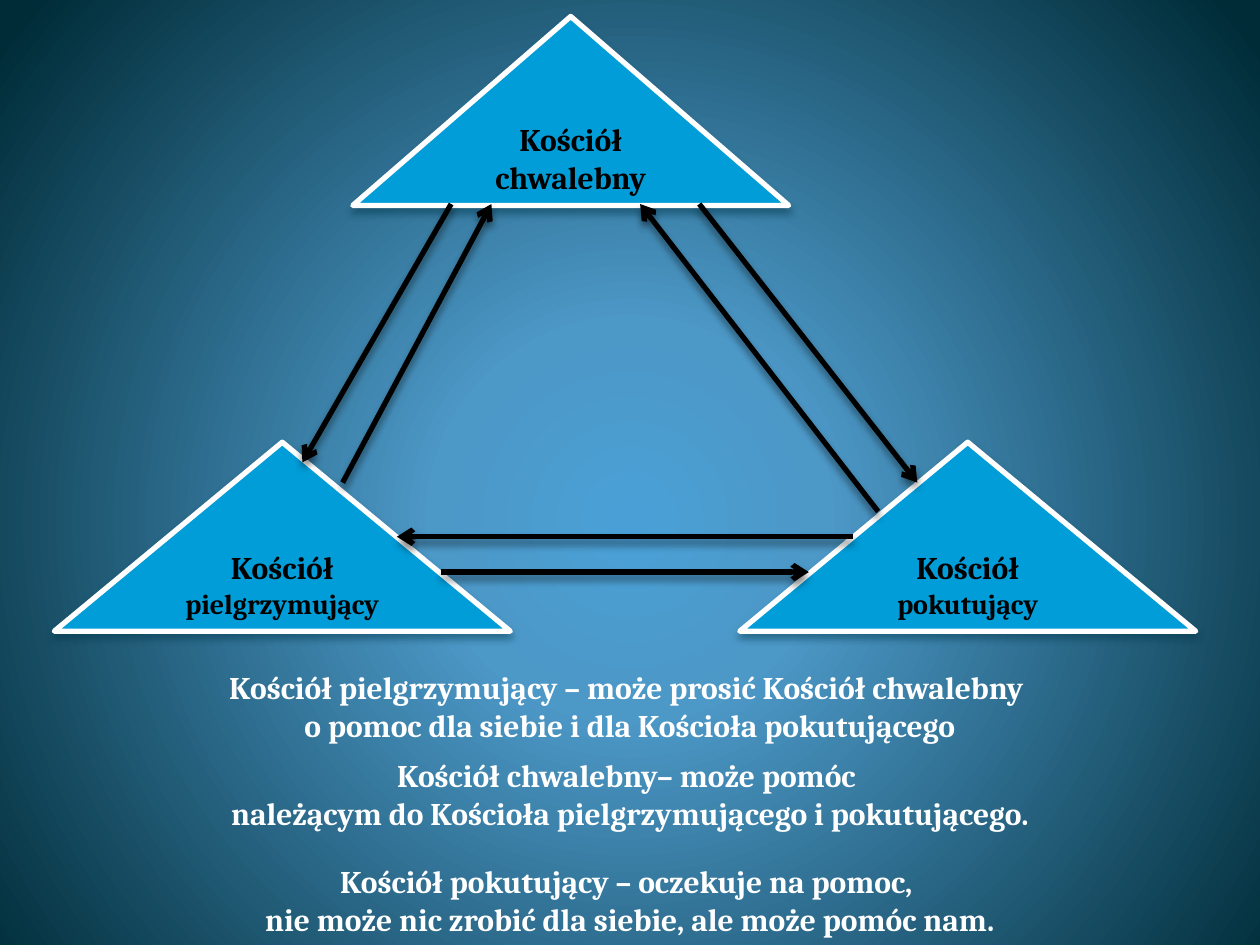
from lxml import etree
from pptx import Presentation
from pptx.dml.color import RGBColor
from pptx.enum import shapes, text
from pptx.oxml import parse_xml
from pptx.oxml.ns import nsdecls, qn
from pptx.util import Pt

COLORS = {"fill": "009DD9", "outline": "FFFFFF", "label": "000000", "note": "FFFFFF",
          "arrow": "000000", "triangle_shadow": "00374C", "arrow_shadow": "000000"}
BACKGROUND = [(0, "4AA0D6"), (25, "4C98C7"), (100, "002C38")]
FONT = "Cambria"


def rgb(name):
    return RGBColor.from_string(COLORS[name])


def set_background(s):
    stops = "".join(f'<a:gs pos="{pos * 1000}"><a:srgbClr val="{color}"/></a:gs>'
                    for pos, color in BACKGROUND)
    s._element.cSld.insert(0, parse_xml(
        f'<p:bg {nsdecls("p", "a")}><p:bgPr><a:gradFill rotWithShape="1">'
        f'<a:gsLst>{stops}</a:gsLst><a:path path="circle">'
        '<a:fillToRect l="10000" t="110000" r="10000" b="100000"/></a:path>'
        '</a:gradFill><a:effectLst/></p:bgPr></p:bg>'))


def add_shadow(sp, name):
    sp_pr = sp._element.spPr
    for old in sp_pr.findall(qn("a:effectLst")):
        sp_pr.remove(old)
    sp_pr.append(parse_xml(
        f'<a:effectLst {nsdecls("a")}><a:outerShdw blurRad="{Pt(4.5)}" dist="{Pt(3)}" '
        f'dir="5400000" rotWithShape="0"><a:srgbClr val="{COLORS[name]}">'
        '<a:alpha val="48000"/></a:srgbClr></a:outerShdw></a:effectLst>'))


def style_run(r, size, color):
    r.font.name, r.font.size, r.font.bold = FONT, Pt(size), True
    r.font.color.rgb = rgb(color)


def add_triangle(group, x, y, w, h, words):
    sp = group.shapes.add_shape(shapes.MSO_SHAPE.ISOSCELES_TRIANGLE,
                                Pt(x), Pt(y), Pt(w), Pt(h))
    sp.fill.solid()
    sp.fill.fore_color.rgb = rgb("fill")
    sp.line.color.rgb = rgb("outline")
    sp.line.width = Pt(3)
    etree.SubElement(sp.line._get_or_add_ln(), qn("a:round"))
    add_shadow(sp, "triangle_shadow")
    tf = sp.text_frame
    tf.word_wrap = True
    tf.vertical_anchor = text.MSO_ANCHOR.MIDDLE
    p = tf.paragraphs[0]
    p.alignment = text.PP_ALIGN.CENTER
    for word, size in words:
        r = p.add_run()
        r.text = word
        style_run(r, size, "label")


def add_arrow(group, x1, y1, x2, y2):
    line = group.shapes.add_connector(shapes.MSO_CONNECTOR.STRAIGHT,
                                      Pt(x1), Pt(y1), Pt(x2), Pt(y2))
    line.line.color.rgb = rgb("arrow")
    line.line.width = Pt(3)
    etree.SubElement(line.line._get_or_add_ln(), qn("a:tailEnd"), type="arrow")
    add_shadow(line, "arrow_shadow")


def add_diagram(s, x, y, w, h):
    group = s.shapes.add_group_shape()
    tri_h, base_w, top_w = 108, 260.6, 249.1
    base_y = y + h - tri_h
    # Three churches: one above, two at the base corners
    add_triangle(group, x + 170.6, y, top_w, tri_h, [("Kościół chwalebny", 18)])
    for left, name in ((x, "pielgrzymujący"), (x + w - base_w, "pokutujący")):
        add_triangle(group, left, base_y, base_w, tri_h, [("Kościół ", 18), (name, 16)])
    # Arrows in both directions between each pair
    for x1, y1, x2, y2 in ((456.4, 297.3, 195.8, 297.3), (221, 317.5, 431.2, 317.5),
                           (164.8, 266.4, 249.8, 107.2), (226.8, 107.2, 141.8, 254.8),
                           (368.6, 107.2, 493.2, 266.4), (470.8, 282.9, 334.8, 107.2)):
        add_arrow(group, x + x1, y + y1, x + x2, y + y2)


def add_note(s, x, y, w, h, note):
    tf = s.shapes.add_textbox(Pt(x), Pt(y), Pt(w), Pt(h)).text_frame
    tf.word_wrap = True
    tf.auto_size = text.MSO_AUTO_SIZE.SHAPE_TO_FIT_TEXT
    p = tf.paragraphs[0]
    p.text = note
    p.alignment = text.PP_ALIGN.CENTER
    for r in p.runs:
        style_run(r, 18, "note")


def main():
    prs = Presentation()
    prs.slide_width, prs.slide_height = Pt(720), Pt(540)
    s = prs.slides.add_slide(prs.slide_layouts[6])
    set_background(s)
    add_diagram(s, 31, 9.4, 652.3, 351.3)
    # Explanations below the diagram
    for y, note in (
            (378, "Kościół pielgrzymujący – może prosić Kościół chwalebny \v"
                  "o pomoc dla siebie i dla Kościoła pokutującego"),
            (428.4, "Kościół chwalebny– może pomóc \v"
                    "należącym do Kościoła pielgrzymującego i pokutującego."),
            (488.9, "Kościół pokutujący – oczekuje na pomoc, \v"
                    "nie może nic zrobić dla siebie, ale może pomóc nam.")):
        add_note(s, 0, y, 720, 51, note)
    prs.save("out.pptx")


if __name__ == "__main__":
    main()
